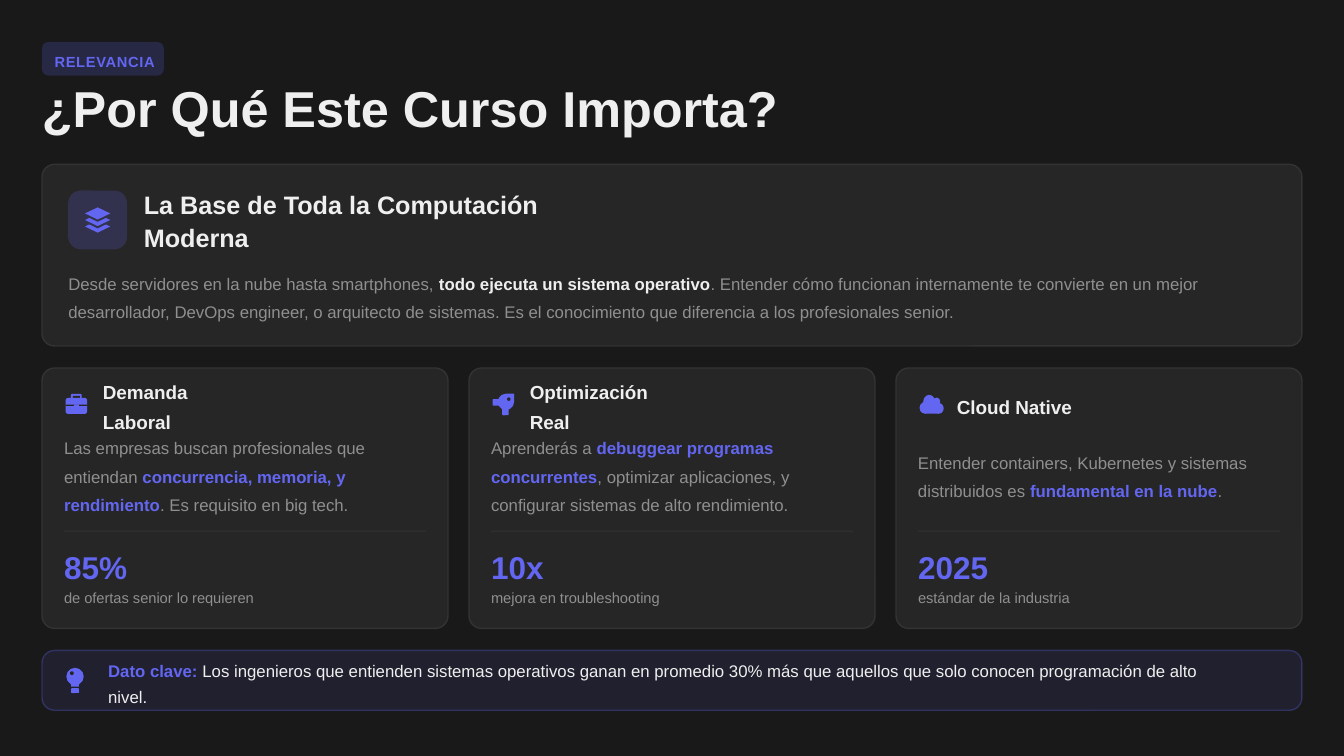
import pptx
import pptx.util
import pptx.dml.color
import pptx.enum.shapes
import pptx.enum.text
import pptx.oxml.ns
from lxml import etree

COLUMNS, ROWS = 1280, 720
CELL = 9525
MARGIN, GAP, RADIUS = 40, 20, 12
CONTENT = COLUMNS - 2 * MARGIN
COLORS = {"page": "191919", "panel": "262626", "edge": "333333", "tile": "32334F",
          "accent": "6366F1", "bright": "EFEFEF", "muted": "8F8F8F"}
SHAPES = pptx.enum.shapes.MSO_SHAPE
BLOCK, ROUNDED, OVAL = SHAPES.RECTANGLE, SHAPES.ROUNDED_RECTANGLE, SHAPES.OVAL

ICONS = {
    "layers": [(SHAPES.DIAMOND, color, 0, top, 1, 0.48) for color, top in
               (("accent", 0.52), ("tile", 0.35), ("accent", 0.26), ("tile", 0.09), ("accent", 0))],
    "briefcase": [(ROUNDED, "accent", 0.25, 0, 0.5, 0.4), (BLOCK, "panel", 0.34, 0.1, 0.32, 0.09),
                  (ROUNDED, "accent", 0, 0.19, 1, 0.75), (BLOCK, "panel", 0, 0.5, 1, 0.06),
                  (BLOCK, "accent", 0.38, 0.5, 0.24, 0.1)],
    "rocket": [(ROUNDED, "accent", 0, 0.25, 0.5, 0.31), (ROUNDED, "accent", 0.44, 0.5, 0.31, 0.5),
               (SHAPES.TEAR, "accent", 0.24, 0, 0.76, 0.76), (OVAL, "panel", 0.67, 0.17, 0.16, 0.16)],
    "cloud": [(OVAL, "accent", 0, 0.38, 0.45, 0.55), (OVAL, "accent", 0.15, 0.05, 0.5, 0.65),
              (OVAL, "accent", 0.55, 0.18, 0.3, 0.38), (OVAL, "accent", 0.6, 0.43, 0.4, 0.5),
              (BLOCK, "accent", 0.22, 0.5, 0.58, 0.43)],
    "bulb": [(OVAL, "accent", 0.04, 0, 0.92, 0.69), (BLOCK, "accent", 0.29, 0.5, 0.42, 0.25),
             (ROUNDED, "accent", 0.29, 0.81, 0.42, 0.19), (OVAL, "panel", 0.23, 0.14, 0.2, 0.15)],
}


def cells(*lengths):
    return [round(length * CELL) for length in lengths]


def rgb(name):
    return pptx.dml.color.RGBColor.from_string(COLORS[name])


def paint(fill, name, opacity=100):
    fill.solid()
    fill.fore_color.rgb = rgb(name)
    if opacity < 100:
        color = fill._xPr.find(".//" + pptx.oxml.ns.qn("a:srgbClr"))
        etree.SubElement(color, pptx.oxml.ns.qn("a:alpha"), val=str(opacity * 1000))


def add_panel(slide, box, fill, opacity=100, kind=BLOCK, radius=0, edge=None, edge_opacity=100):
    panel = slide.shapes.add_shape(kind, *cells(*box))
    panel.shadow.inherit = False
    if radius:
        panel.adjustments[0] = radius / min(box[2:])
    paint(panel.fill, fill, opacity)
    if edge:
        panel.line.width = pptx.util.Pt(1)
        paint(panel.line.fill, edge, edge_opacity)
    else:
        panel.line.fill.background()


def add_text(slide, box, runs, size=12, spacing=1.0, tracking=0):
    frame = slide.shapes.add_textbox(*cells(*box)).text_frame
    frame.word_wrap = True
    frame.vertical_anchor = pptx.enum.text.MSO_ANCHOR.MIDDLE
    frame.margin_left = frame.margin_right = frame.margin_top = frame.margin_bottom = 0
    paragraph = frame.paragraphs[0]
    paragraph.line_spacing = spacing
    for words, color, bold in runs:
        run = paragraph.add_run()
        run.text = words
        run.font.name = "Arial"
        run.font.size = pptx.util.Pt(size)
        run.font.bold = bold
        run.font.color.rgb = rgb(color)
        if tracking:
            run.font._element.set("spc", str(round(tracking * 100)))


def add_icon(slide, name, box):
    left, top, width, height = box
    for kind, color, x, y, across, down in ICONS[name]:
        part = (left + x * width, top + y * height, across * width, down * height)
        add_panel(slide, part, color, kind=kind)


def add_header(slide, left, top):
    add_panel(slide, (left, top, 116, 32), "accent", 20, ROUNDED, 6)
    add_text(slide, (left + 12, top + 7, 104, 20), [("RELEVANCIA", "accent", True)],
             size=10.5, spacing=1.2, tracking=0.5)
    add_text(slide, (left, top + 44, 1224, 48),
             [("¿Por Qué Este Curso Importa?", "bright", True)], size=36, spacing=0.8)


def add_foundation(slide, left, top, width, height):
    add_panel(slide, (left, top, width, height), "panel", kind=ROUNDED, radius=RADIUS, edge="edge")
    add_panel(slide, (left + 25, top + 25, 56, 56), "accent", 20, ROUNDED, RADIUS)
    add_icon(slide, "layers", (left + 41, top + 41, 24, 24))
    add_text(slide, (left + 97, top + 36.5, 455, 32),
             [("La Base de Toda la Computación Moderna", "bright", True)], size=18, spacing=1.1)
    add_text(slide, (left + 25, top + 97, 1158, 52), [
        ("Desde servidores en la nube hasta smartphones, ", "muted", False),
        ("todo ejecuta un sistema operativo", "bright", True),
        (". Entender cómo funcionan internamente te convierte en un mejor desarrollador, "
         "DevOps engineer, o arquitecto de sistemas. Es el conocimiento que diferencia "
         "a los profesionales senior.", "muted", False)], spacing=1.4)


def add_reason(slide, box, icon, icon_width, title, title_width, before, key, after, figure, caption):
    left, top, width, height = box
    inner = left + 21
    add_panel(slide, box, "panel", kind=ROUNDED, radius=RADIUS, edge="edge")
    add_icon(slide, icon, (left + 22.5, top + 24.5, icon_width, 20.5))
    add_text(slide, (left + 58, top + 20, title_width, 28), [(title, "bright", True)],
             size=13.5, spacing=1.3)
    add_text(slide, (inner, top + 60.5, 353, 78),
             [(before, "muted", False), (key, "accent", True), (after, "muted", False)],
             spacing=1.4)
    add_panel(slide, (inner, top + 155, width - 42, 1), "edge")
    add_text(slide, (inner, top + 171.5, 360, 36), [(figure, "accent", True)], size=22.5)
    add_text(slide, (inner, top + 207, 352, 20), [(caption, "muted", False)],
             size=10.5, spacing=1.2)


def add_key_fact(slide, left, top, width, height):
    add_panel(slide, (left, top, width, height), "accent", 10, ROUNDED, RADIUS, "accent", 30)
    add_icon(slide, "bulb", (left + 22.5, top + 16.5, 18, 24))
    add_text(slide, (left + 63, top + 16.5, 1055, 24), [
        ("Dato clave:", "accent", True),
        (" Los ingenieros que entienden sistemas operativos ganan en promedio 30% más que "
         "aquellos que solo conocen programación de alto nivel.", "bright", False)], spacing=1.3)


REASONS = [
    ("briefcase", 20.5, "Demanda Laboral", 148, "Las empresas buscan profesionales que entiendan ",
     "concurrencia, memoria, y rendimiento", ". Es requisito en big tech.",
     "85%", "de ofertas senior lo requieren"),
    ("rocket", 20.5, "Optimización Real", 152, "Aprenderás a ", "debuggear programas concurrentes",
     ", optimizar aplicaciones, y configurar sistemas de alto rendimiento.",
     "10x", "mejora en troubleshooting"),
    ("cloud", 23, "Cloud Native", 112, "Entender containers, Kubernetes y sistemas distribuidos es ",
     "fundamental en la nube", ".", "2025", "estándar de la industria"),
]


def main():
    deck = pptx.Presentation()
    deck.slide_width, deck.slide_height = cells(COLUMNS, ROWS)
    slide = deck.slides.add_slide(deck.slide_layouts[6])
    paint(slide.background.fill, "page")
    add_header(slide, MARGIN, MARGIN)
    add_foundation(slide, MARGIN, 156.5, CONTENT, 173)
    card_width = (CONTENT - GAP * (len(REASONS) - 1)) / len(REASONS)
    for column, reason in enumerate(REASONS):
        left = MARGIN + column * (card_width + GAP)
        add_reason(slide, (left, 350.5, card_width, 248), *reason)
    add_key_fact(slide, MARGIN, 619.5, CONTENT, 57)
    deck.save("out.pptx")


if __name__ == "__main__":
    main()
